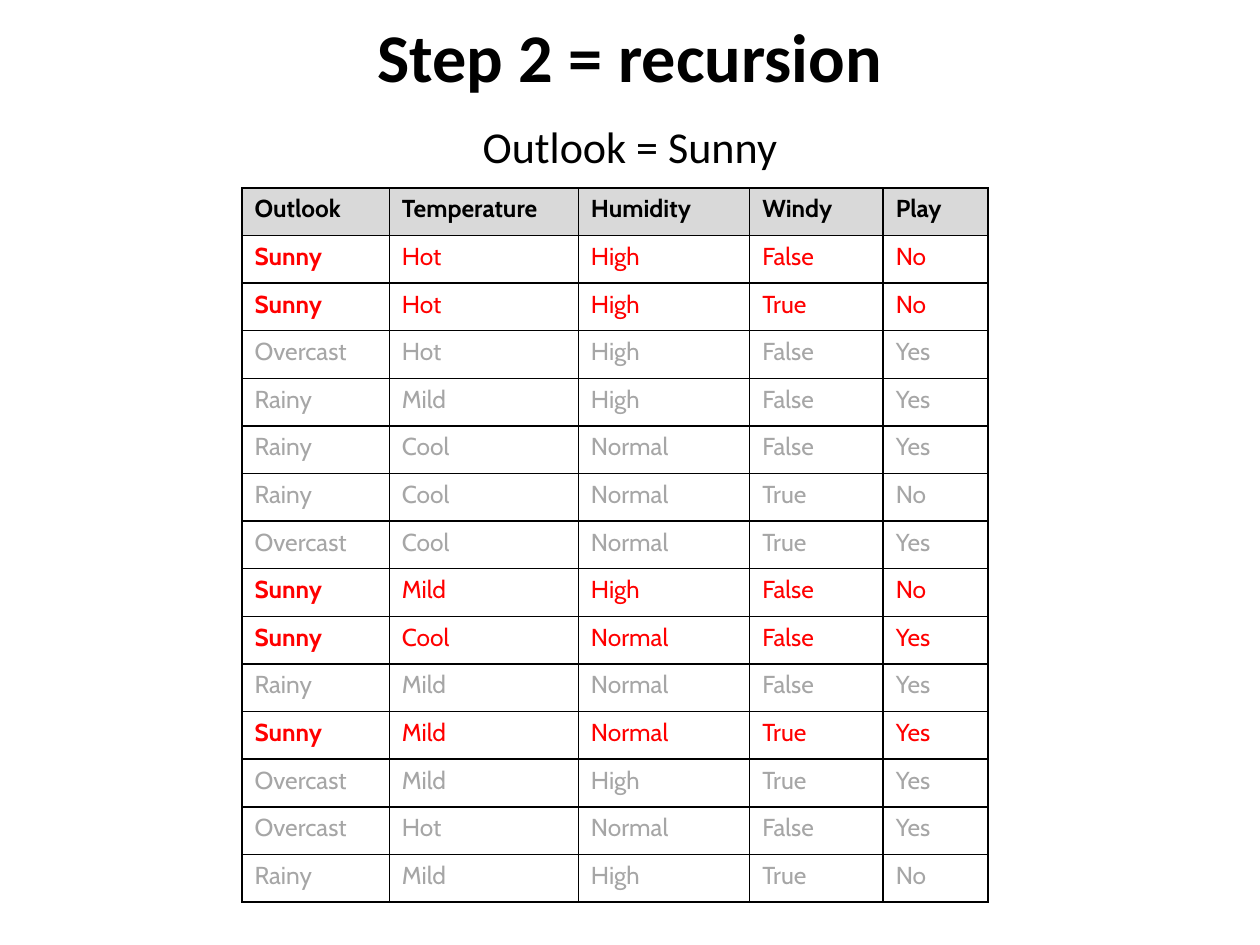
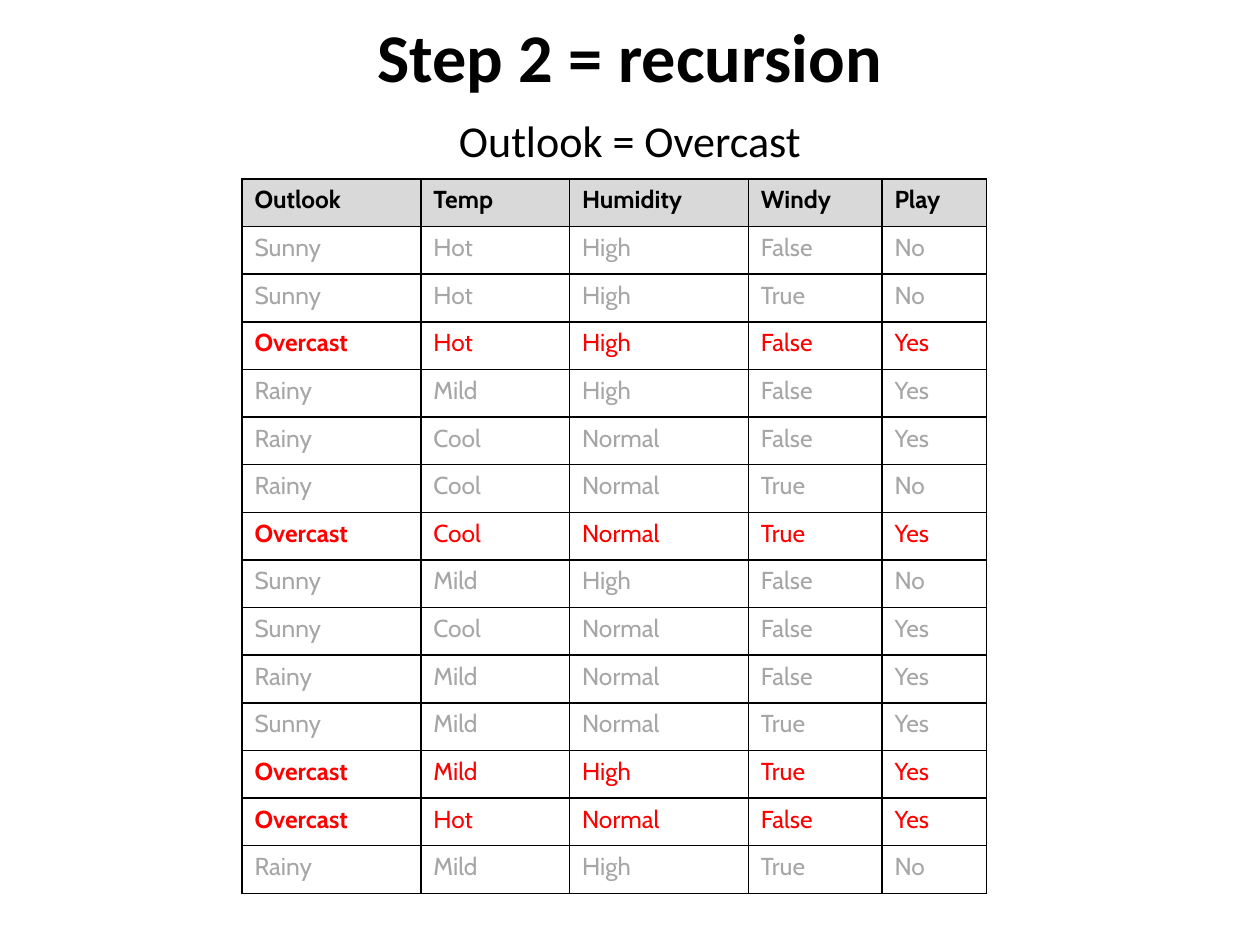
from pptx import Presentation
from pptx.dml.color import RGBColor
from pptx.enum.text import MSO_ANCHOR, PP_ALIGN
from pptx.oxml import parse_xml
from pptx.oxml.ns import nsdecls
from pptx.util import Inches, Pt

BLACK = RGBColor(0x00, 0x00, 0x00)
WHITE = RGBColor(0xFF, 0xFF, 0xFF)
RED = RGBColor(0xFF, 0x00, 0x00)
GREY = RGBColor(0xA6, 0xA6, 0xA6)
SILVER = RGBColor(0xD9, 0xD9, 0xD9)

# Weather records shared by both slides
DATA = [line.split() for line in """
Sunny Hot High False No
Sunny Hot High True No
Overcast Hot High False Yes
Rainy Mild High False Yes
Rainy Cool Normal False Yes
Rainy Cool Normal True No
Overcast Cool Normal True Yes
Sunny Mild High False No
Sunny Cool Normal False Yes
Rainy Mild Normal False Yes
Sunny Mild Normal True Yes
Overcast Mild High True Yes
Overcast Hot Normal False Yes
Rainy Mild High True No
""".strip().splitlines()]


class Deck:
    """Holds the shared style and the current slide."""

    head_font = "Calibri"
    cell_font = "Cabin"

    def __init__(self):
        self.prs = Presentation()
        self.prs.slide_width = Inches(10)
        self.prs.slide_height = Inches(7.5)
        self.slide = None

    def start(self):
        self.slide = self.prs.slides.add_slide(self.prs.slide_layouts[6])

    def run(self, para, text, font, size, color, bold=False):
        run = para.add_run()
        run.text = text
        run.font.name = font
        run.font.size = Pt(size)
        run.font.bold = bold
        run.font.color.rgb = color

    def heading(self, text, top, height, size, bold=False):
        box = self.slide.shapes.add_textbox(
            Inches(0.5), Inches(top), Inches(9), Inches(height))
        frame = box.text_frame
        frame.word_wrap = True
        frame.vertical_anchor = MSO_ANCHOR.MIDDLE
        frame.margin_top = frame.margin_bottom = 0
        para = frame.paragraphs[0]
        para.alignment = PP_ALIGN.CENTER
        self.run(para, text, self.head_font, size, BLACK, bold)

    def border(self, cell):
        props = cell._tc.get_or_add_tcPr()
        for side in ("lnL", "lnR", "lnT", "lnB"):
            props.append(parse_xml(
                f'<a:{side} {nsdecls("a")} w="{Pt(1)}"><a:solidFill>'
                f'<a:srgbClr val="{BLACK}"/></a:solidFill></a:{side}>'))

    def cell(self, cell, text, color, bold, fill):
        self.border(cell)
        cell.fill.solid()
        cell.fill.fore_color.rgb = fill
        para = cell.text_frame.paragraphs[0]
        self.run(para, text, self.cell_font, 14, color, bold)

    def table(self, top, names, widths, pick):
        """Draw the records, with those of the picked outlook in red."""
        table = self.slide.shapes.add_table(
            len(DATA) + 1, len(names), Inches(1.92), Inches(top),
            Inches(sum(widths)), Inches(5.67)).table
        table.first_row = table.horz_banding = False
        for col, width in zip(table.columns, widths):
            col.width = Inches(width)

        # Header row
        for col, name in enumerate(names):
            self.cell(table.cell(0, col), name, BLACK, True, SILVER)

        # Record rows
        for row, values in enumerate(DATA, 1):
            match = values[0] == pick
            for col, value in enumerate(values):
                self.cell(table.cell(row, col), value, RED if match else GREY,
                          match and col == 0, WHITE)

    def branch(self, pick, top, height, start, temp, widths):
        """Add the slide for one branch of the decision tree."""
        self.start()
        self.heading(f"Outlook = {pick}", top, height, 25.2)
        names = ["Outlook", temp, "Humidity", "Windy", "Play"]
        self.table(start, names, widths, pick)
        self.heading("Step 2 = recursion", 0.08, 0.72, 39, True)


def main():
    deck = Deck()
    deck.branch("Sunny", 0.92, 0.47, 1.49, "Temperature",
                [1.17, 1.5, 1.36, 1.06, 0.83])
    deck.branch("Overcast", 0.91, 0.4, 1.42, "Temp",
                [1.42, 1.18, 1.42, 1.06, 0.83])
    deck.prs.save("out.pptx")


if __name__ == "__main__":
    main()
